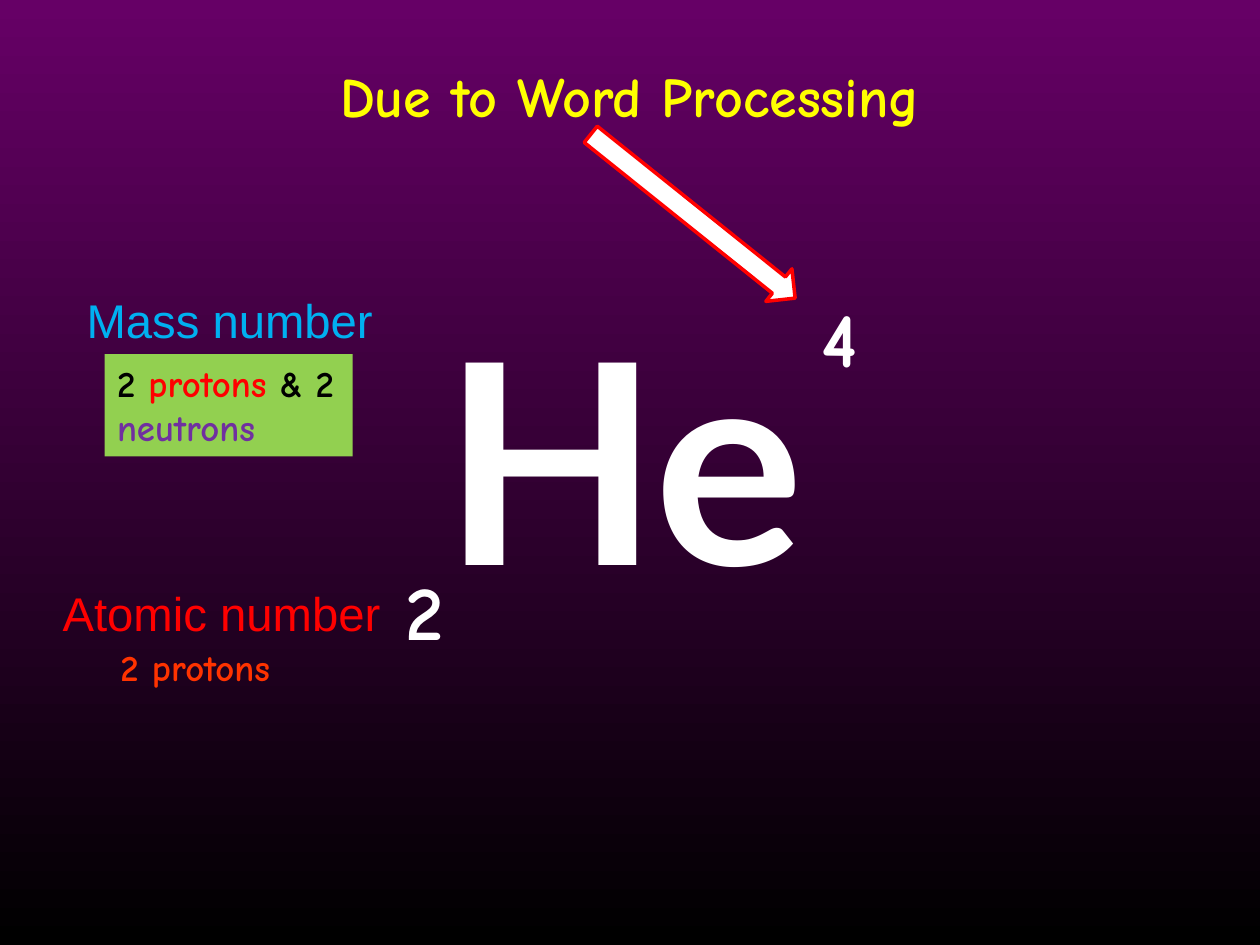
from pptx import Presentation
from pptx.dml.color import RGBColor
from pptx.enum.shapes import MSO_SHAPE
from pptx.enum.text import MSO_ANCHOR, MSO_AUTO_SIZE, PP_ALIGN
from pptx.util import Cm, Pt

CENTER, LEFT = PP_ALIGN.CENTER, PP_ALIGN.LEFT
TOP = MSO_ANCHOR.TOP
NO_FIT = MSO_AUTO_SIZE.NONE
RIGHT_ARROW = MSO_SHAPE.RIGHT_ARROW
HAND, ROUND, SANS = "Comic Neue", "Lato", "Arial"
WHITE = "FFFFFF"


def rgb(color):
    return RGBColor.from_string(color)


def write(sp, runs, size, font, bold=True, align=LEFT, wrap=True):
    """Fill a shape with one paragraph of (text, colour) runs."""
    tf = sp.text_frame
    tf.word_wrap = wrap
    tf.auto_size = NO_FIT
    tf.vertical_anchor = TOP
    p = tf.paragraphs[0]
    p.alignment = align
    p.font.size, p.font.name, p.font.bold = Pt(size), font, bold
    for text, color in runs:
        r = p.add_run()
        r.text = text
        r.font.color.rgb = rgb(color)


def add_text(s, x, y, w, h, runs, size, font, **style):
    sp = s.shapes.add_textbox(Cm(x), Cm(y), Cm(w), Cm(h))
    write(sp, runs, size, font, **style)
    return sp


def paint_background(s):
    fill = s.background.fill
    fill.gradient()
    fill.gradient_angle = 270
    for stop, color in zip(fill.gradient_stops, ("660066", "000000")):
        stop.color.rgb = rgb(color)


def place_title(s, x, y, w, h, text):
    sp = s.shapes.title
    sp.left, sp.top, sp.width, sp.height = Cm(x), Cm(y), Cm(w), Cm(h)
    write(sp, [(text, "FFFF00")], 32, HAND, align=CENTER)


def add_nuclide(s, x, y, symbol, mass, atomic):
    """Large element symbol, mass number upper right, atomic number lower left."""
    add_text(s, x + 0.77, y, 10, 7.09, [(symbol, WHITE)], 160, ROUND)
    for dx, dy, number in ((0, 5.59, atomic), (8.39, 0.1, mass)):
        add_text(s, x + dx, y + dy, 1.4, 2.13, [(number, WHITE)], 44, HAND)


def add_label(s, x, y, w, heading, detail_box, detail, fill=None):
    """Heading with a detail box placed relative to the heading's corner."""
    dx, dy, dw, dh = detail_box
    sp = add_text(s, x + dx, y + dy, dw, dh, detail, 21, HAND)
    if fill:
        sp.fill.solid()
        sp.fill.fore_color.rgb = rgb(fill)
    add_text(s, x, y, w, 1.42, [heading], 27, SANS,
             bold=False, align=CENTER, wrap=False)


def add_pointer(s, x, y, w, h, angle):
    sp = s.shapes.add_shape(RIGHT_ARROW, Cm(x), Cm(y), Cm(w), Cm(h))
    sp.rotation = angle
    sp.shadow.inherit = False
    sp.fill.solid()
    sp.fill.fore_color.rgb = rgb(WHITE)
    sp.line.color.rgb = rgb("FF0000")
    sp.line.width = Pt(2)


def main():
    prs = Presentation()
    prs.slide_width, prs.slide_height = Cm(25.4), Cm(19.05)
    s = prs.slides.add_slide(prs.slide_layouts[5])
    paint_background(s)
    place_title(s, 0, 1.12, 25.4, 1.63, "Due to Word Processing")
    add_nuclide(s, 7.92, 5.64, "He", mass="4", atomic="2")
    add_label(s, 1.47, 5.74, 6.32, ("Mass number", "00B0F0"),
              (0.64, 1.4, 5, 2.06),
              [("2 ", "000000"), ("protons ", "FF0000"),
               ("& 2 ", "000000"), ("neutrons", "7030A0")], fill="92D050")
    add_label(s, 0.97, 11.66, 6.99, ("Atomic number", "FF0000"),
              (1.21, 1.22, 5.87, 1.14), [("2 protons", "FF3300")])
    add_pointer(s, 11.33, 3.94, 5.28, 0.84, 38.7)
    prs.save("out.pptx")


if __name__ == "__main__":
    main()
